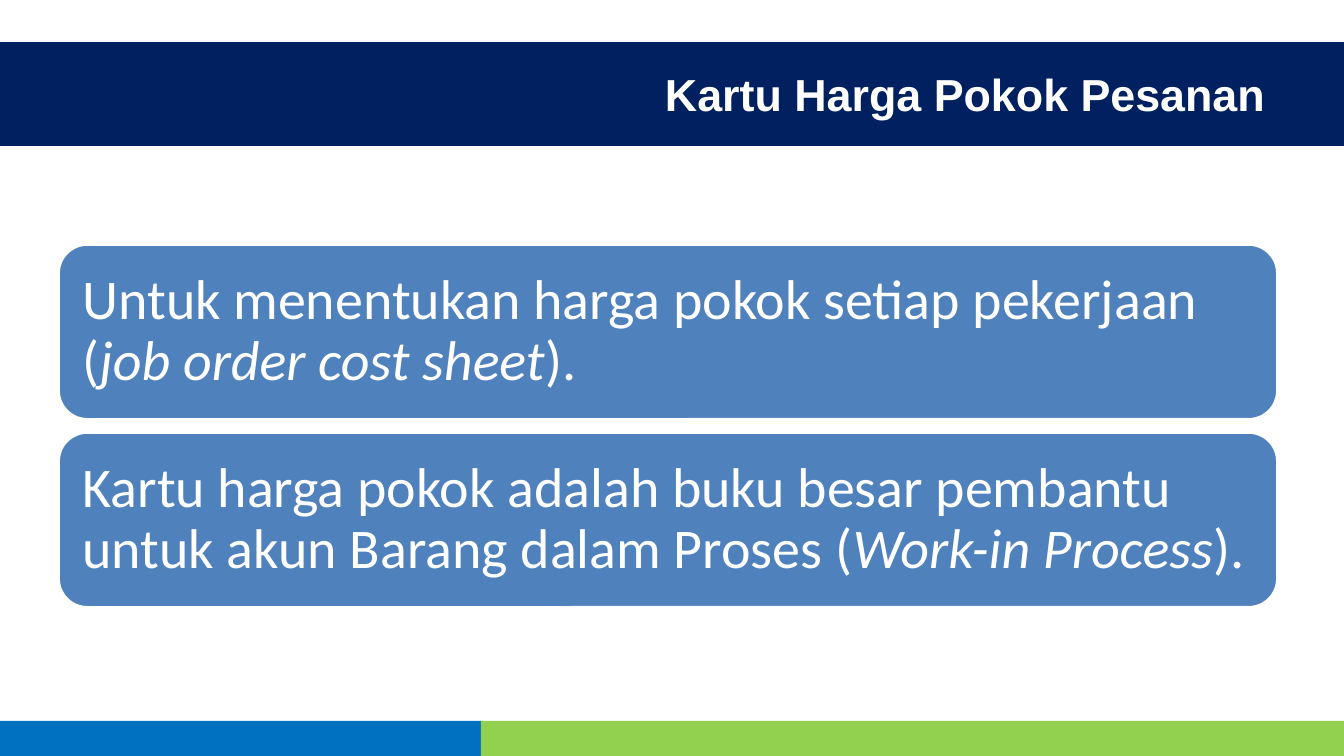
from dataclasses import dataclass

from pptx import Presentation
from pptx.dml.color import RGBColor
from pptx.enum.shapes import MSO_SHAPE
from pptx.enum.text import MSO_ANCHOR, PP_ALIGN
from pptx.util import Emu, Pt

SCALE = 9144000 / 1344


@dataclass(frozen=True)
class Theme:
    """Colours, fonts and type sizes of the slide."""
    navy: str = "002060"
    blue: str = "0070C0"
    green: str = "92D050"
    card: str = "4F81BD"
    white: str = "FFFFFF"
    head: str = "Arial"
    body: str = "Calibri"
    large: int = 30
    title: int = 24


@dataclass(frozen=True)
class Box:
    """A place on the slide in px."""
    left: int
    top: int
    width: int
    height: int


@dataclass(frozen=True)
class Band:
    """A plain coloured bar."""
    box: Box
    fill: str


@dataclass(frozen=True)
class Card:
    """A statement that ends with a foreign term in brackets."""
    lead: str
    term: str


THEME = Theme()
BANDS = (
    Band(Box(0, 721, 481, 35), THEME.blue),
    Band(Box(481, 721, 863, 35), THEME.green),
    Band(Box(0, 42, 1344, 104), THEME.navy),
)
CARDS = (
    Card("Untuk menentukan harga pokok setiap pekerjaan (", "job order cost sheet"),
    Card("Kartu harga pokok adalah buku besar pembantu untuk akun Barang dalam Proses (",
         "Work-in Process"),
)
FIRST = Box(58, 244, 1220, 176)
PITCH = 188


def px(count: int) -> Emu:
    """Turn px into EMU."""
    return Emu(round(count * SCALE))


def place(box: Box) -> tuple:
    """Give the four EMU lengths of a box."""
    return px(box.left), px(box.top), px(box.width), px(box.height)


def write(shape, *parts: tuple[str, bool], font: str, size: int, color: str,
          align=PP_ALIGN.LEFT, bold: bool = False, lines: float = 1.0,
          inset: tuple[int, int] = (13, 7)) -> None:
    """Fill a shape with one paragraph of (text, italic) parts."""
    frame = shape.text_frame
    frame.word_wrap = True
    frame.vertical_anchor = MSO_ANCHOR.MIDDLE
    frame.margin_left = frame.margin_right = px(inset[0])
    frame.margin_top = frame.margin_bottom = px(inset[1])
    para = frame.paragraphs[0]
    para.alignment = align
    para.line_spacing = lines
    for text, slant in parts:
        run = para.add_run()
        run.text = text
        run.font.name = font
        run.font.size = Pt(size)
        run.font.bold = bold
        run.font.italic = slant
        run.font.color.rgb = RGBColor.from_string(color)


def block(slide, kind: MSO_SHAPE, box: Box, fill: str):
    """Add a flat filled shape without an outline."""
    shape = slide.shapes.add_shape(kind, *place(box))
    shape.shadow.inherit = False
    shape.fill.solid()
    shape.fill.fore_color.rgb = RGBColor.from_string(fill)
    shape.line.fill.background()
    return shape


def draw_card(slide, card: Card, box: Box) -> None:
    """Add a rounded card with its statement."""
    shape = block(slide, MSO_SHAPE.ROUNDED_RECTANGLE, box, THEME.card)
    shape.line.color.rgb = RGBColor.from_string(THEME.white)
    shape.line.width = Pt(2)
    write(shape, (card.lead, False), (card.term, True), (").", False),
          font=THEME.body, size=THEME.large, color=THEME.white,
          lines=0.9, inset=(16, 16))


def draw_title(slide, text: str, box: Box) -> None:
    """Set the title in front of its band."""
    title = slide.shapes.title
    title.left, title.top, title.width, title.height = place(box)
    slide.shapes.element.append(title.element)
    write(title, (text, False), font=THEME.head, size=THEME.title,
          color=THEME.white, align=PP_ALIGN.RIGHT, bold=True)


def main() -> None:
    """Build and save the slide."""
    deck = Presentation()
    deck.slide_width, deck.slide_height = px(1344), px(756)
    slide = deck.slides.add_slide(deck.slide_layouts[5])
    for band in BANDS:
        block(slide, MSO_SHAPE.RECTANGLE, band.box, band.fill)
    draw_title(slide, "Kartu Harga Pokok Pesanan", Box(223, 42, 1055, 104))
    for row, card in enumerate(CARDS):
        top = FIRST.top + row * PITCH
        draw_card(slide, card, Box(FIRST.left, top, FIRST.width, FIRST.height))
    deck.save("out.pptx")


if __name__ == "__main__":
    main()
